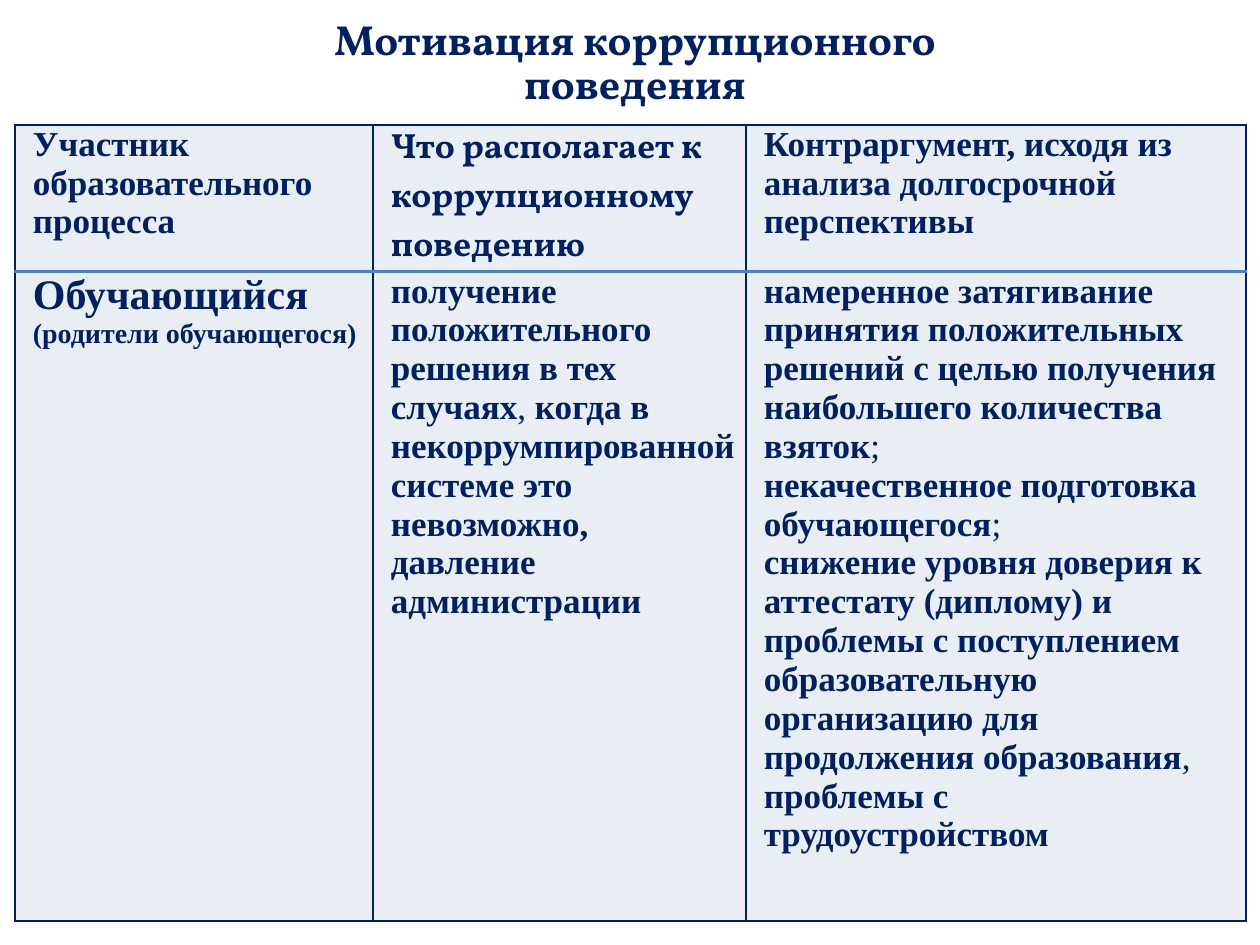
import pptx
import pptx.util
import pptx.dml.color
import pptx.enum.text
import pptx.oxml.ns
import lxml.etree

NAVY, BLUE, PALE = "002060", "4F81BD", "E9EDF4"
SERIF, DISPLAY = "Times New Roman", "Vollkorn"

TITLE = "Мотивация коррупционного поведения"
TITLE_BOX = (233, 16, 804, 96)
TABLE_LEFT, TABLE_TOP = 15, 125
COLUMN_WIDTHS = (358, 373, 500)
ROW_HEIGHTS = (146, 649)
SIDE_MARGIN, INDENT = 6, 12

# A cell is a list of paragraphs: (font, size, spans); a span is (text, bold).
HEADER = [
    [(SERIF, 20, [("Участник образовательного процесса", True)])],
    [(DISPLAY, 20, [("Что располагает к коррупционному поведению", True)])],
    [(SERIF, 20, [("Контраргумент, исходя из анализа долгосрочной перспективы", True)])],
]
BODY = [
    [
        (SERIF, 24, [("Обучающийся", True)]),
        (SERIF, 16, [("(родители обучающегося)", True)]),
    ],
    [
        (SERIF, 20, [
            ("получение положительного решения в тех случаях", True),
            (",", False),
            (" когда в некоррумпированной системе это невозможно,", True),
        ]),
        (SERIF, 20, [("давление администрации", True)]),
    ],
    [
        (SERIF, 20, [
            ("намеренное затягивание принятия положительных решений с целью "
             "получения наибольшего количества взяток", True),
            (";", False),
        ]),
        (SERIF, 20, [("некачественное подготовка обучающегося", True), (";", False)]),
        (SERIF, 20, [
            ("снижение уровня доверия к аттестату (диплому) и проблемы с "
             "поступлением образовательную организацию для продолжения "
             "образования", True),
            (",", False),
            (" проблемы с трудоустройством", True),
        ]),
    ],
]


def px(length):
    return pptx.util.Emu(round(length * 914400 / 126))


def color(value):
    return pptx.dml.color.RGBColor.from_string(value)


def style(font, name, size):
    font.name = name
    font.size = pptx.util.Pt(size)
    font.color.rgb = color(NAVY)


def add_borders(cell, borders):
    """Draw cell edges from (side, colour, points), in L, R, T, B order."""
    properties = cell._tc.get_or_add_tcPr()
    for side, value, points in borders:
        line = lxml.etree.SubElement(
            properties, pptx.oxml.ns.qn(f"a:ln{side}"), w=str(pptx.util.Pt(points)))
        fill = lxml.etree.SubElement(line, pptx.oxml.ns.qn("a:solidFill"))
        lxml.etree.SubElement(fill, pptx.oxml.ns.qn("a:srgbClr"), val=value)


def fill_cell(cell, paragraphs):
    cell.margin_left = cell.margin_right = px(SIDE_MARGIN)
    cell.margin_top = cell.margin_bottom = 0
    cell.fill.solid()
    cell.fill.fore_color.rgb = color(PALE)
    frame = cell.text_frame
    for index, (name, size, spans) in enumerate(paragraphs):
        para = frame.add_paragraph() if index else frame.paragraphs[0]
        para._p.get_or_add_pPr().set("marL", str(px(INDENT)))
        style(para.font, name, size)
        for text, bold in spans:
            span = para.add_run()
            span.text = text
            span.font.bold = bold


def add_title(page):
    title = page.shapes.title
    title.left, title.top, title.width, title.height = map(px, TITLE_BOX)
    frame = title.text_frame
    frame.text = TITLE
    frame.word_wrap = True
    frame.auto_size = pptx.enum.text.MSO_AUTO_SIZE.NONE
    frame.vertical_anchor = pptx.enum.text.MSO_ANCHOR.MIDDLE
    para = frame.paragraphs[0]
    para.alignment = pptx.enum.text.PP_ALIGN.CENTER
    para.line_spacing = 0.87
    style(para.font, DISPLAY, 24)
    para.font.bold = True


def add_motives(page):
    rows = (HEADER, BODY)
    table = page.shapes.add_table(
        len(rows), len(COLUMN_WIDTHS), px(TABLE_LEFT), px(TABLE_TOP),
        px(sum(COLUMN_WIDTHS)), px(sum(ROW_HEIGHTS))).table
    table.first_row = table.horz_banding = False
    for column, width in zip(table.columns, COLUMN_WIDTHS):
        column.width = px(width)
    outer, divider = (NAVY, 1), (BLUE, 2)
    edges = ((outer, divider), (divider, outer))
    for r, (row, (top, bottom)) in enumerate(zip(rows, edges)):
        table.rows[r].height = px(ROW_HEIGHTS[r])
        for c, paragraphs in enumerate(row):
            cell = table.cell(r, c)
            add_borders(cell, [("L", *outer), ("R", *outer), ("T", *top), ("B", *bottom)])
            fill_cell(cell, paragraphs)


def main():
    deck = pptx.Presentation()
    deck.slide_width, deck.slide_height = px(1260), px(945)
    page = deck.slides.add_slide(deck.slide_layouts[5])
    add_motives(page)
    add_title(page)
    deck.save("out.pptx")


if __name__ == "__main__":
    main()
